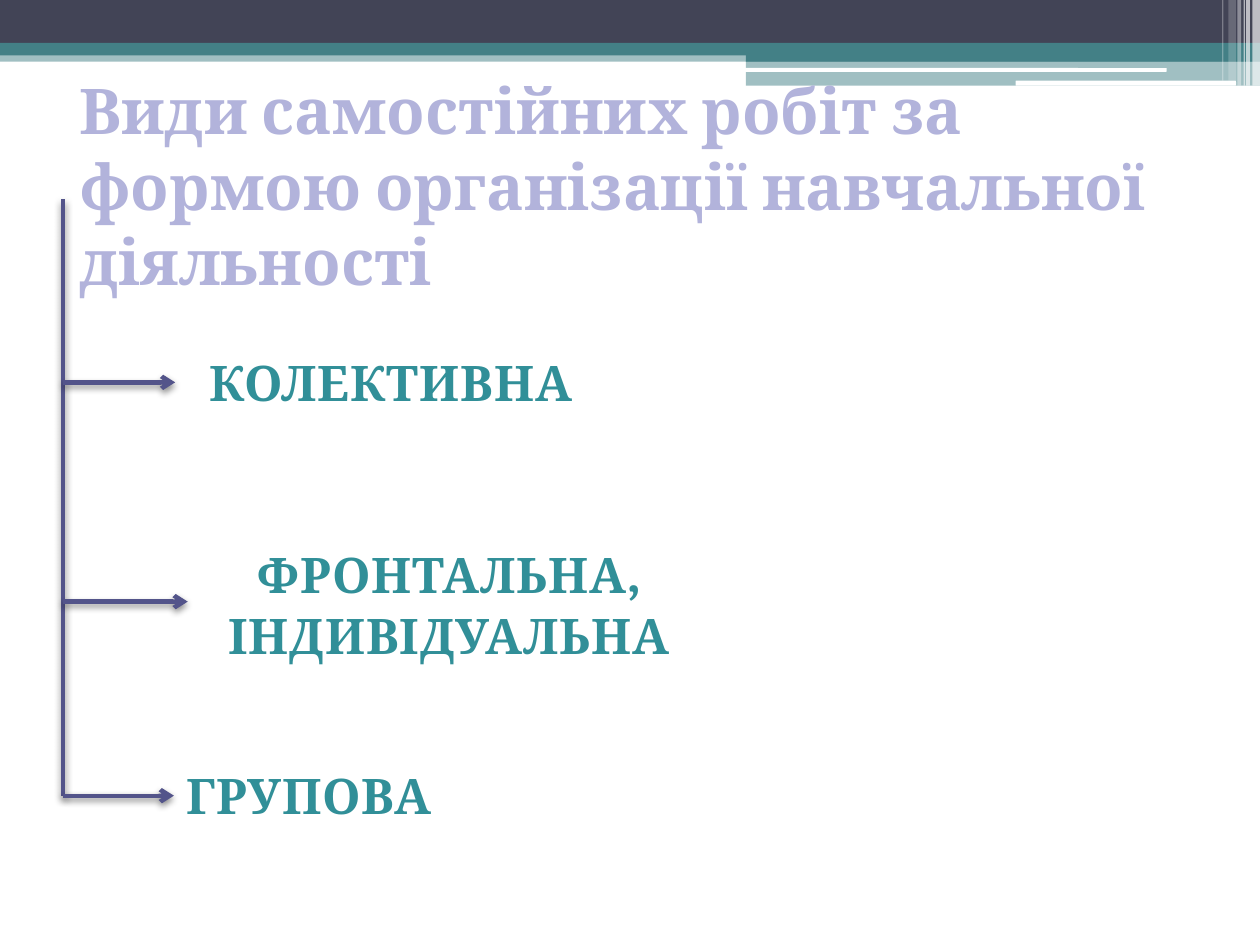
from lxml.etree import SubElement
from pptx import Presentation
from pptx.dml.color import RGBColor
from pptx.enum.shapes import MSO_CONNECTOR as CONNECTOR, MSO_SHAPE as SHAPE
from pptx.enum.text import MSO_AUTO_SIZE as AUTO_SIZE, PP_ALIGN as ALIGN
from pptx.oxml.ns import qn
from pptx.util import Inches, Pt

COLORS = {
    "navy": "424456",
    "teal": "438086",
    "white": "FFFFFF",
    "branch": "53548A",
    "title": "B2B3DB",
    "label": "318F98",
}
FONT = "Cambria"


def add_bar(slide, box, color, opacity=100, kind=SHAPE.RECTANGLE):
    bar = slide.shapes.add_shape(kind, *map(Inches, box))
    bar.shadow.inherit = False
    bar.fill.solid()
    bar.fill.fore_color.rgb = RGBColor.from_string(COLORS[color])
    bar.line.fill.background()
    if opacity < 100:
        fill_color = bar.fill._xPr.find(qn("a:solidFill"))[0]
        SubElement(fill_color, qn("a:alpha"), val=str(opacity * 1000))


def add_text(slide, box, lines, *, size, color, align=ALIGN.LEFT, spacing=0, wrap=False):
    """Each line is a list of (text, size) runs, or a string in the default size."""
    text_box = slide.shapes.add_textbox(*map(Inches, box))
    frame = text_box.text_frame
    frame.word_wrap = wrap
    frame.auto_size = AUTO_SIZE.SHAPE_TO_FIT_TEXT
    for index, line in enumerate(lines):
        paragraph = frame.paragraphs[0] if index == 0 else frame.add_paragraph()
        paragraph.alignment = align
        for text, run_size in [(line, size)] if isinstance(line, str) else line:
            run = paragraph.add_run()
            run.text = text
            run.font.name = FONT
            run.font.size = Pt(run_size)
            run.font.bold = True
            run.font.color.rgb = RGBColor.from_string(COLORS[color])
            if spacing:
                run.font._element.set("spc", str(int(spacing * 100)))
    return text_box


def add_branch(slide, start, end, label=None):
    """Draw a shadowed line; with a label, end it in an arrow at the label's left side."""
    branch = slide.shapes.add_connector(CONNECTOR.STRAIGHT, *map(Inches, start + end))
    branch.line.color.rgb = RGBColor.from_string(COLORS["branch"])
    branch.line.width = Pt(2.5)
    if label is not None:
        branch.end_connect(label, 1)
        SubElement(branch.line._get_or_add_ln(), qn("a:tailEnd"), type="arrow")
    effects = SubElement(branch._element.spPr, qn("a:effectLst"))
    shadow = SubElement(effects, qn("a:outerShdw"), blurRad=str(Pt(4)), dist=str(Pt(2)),
                        dir="5400000", algn="ctr", rotWithShape="0")
    shadow_color = SubElement(shadow, qn("a:srgbClr"), val="000000")
    SubElement(shadow_color, qn("a:alpha"), val="45000")


def add_header(slide, left, top, width):
    right = left + width
    step = left + 5.92
    step_width = right - step
    add_bar(slide, (left, top + 0.4, width, 0.09), "teal", 50)
    add_bar(slide, (left, top, width, 0.34), "navy")
    add_bar(slide, (left, top + 0.34, width, 0.1), "teal")
    add_bar(slide, (step, top + 0.39, step_width, 0.1), "teal")
    add_bar(slide, (step, top + 0.48, step_width, 0.2), "teal", 50)
    for x, y, length, height in [(5.91, 0.54, 3.35, 0.03), (8.06, 0.64, 1.75, 0.04)]:
        add_bar(slide, (left + x, top + y, length, height), "white",
                kind=SHAPE.ROUNDED_RECTANGLE)
    stripes = [  # distance from the right edge, width, height, opacity
        (0.06, 0.06, 0.68, 65),
        (0.11, 0.03, 0.68, 65),
        (0.13, 0.01, 0.68, 60),
        (0.18, 0.03, 0.68, 40),
        (0.25, 0.06, 0.64, 20),
        (0.3, 0.01, 0.64, 30),
    ]
    for offset, stripe_width, height, opacity in stripes:
        add_bar(slide, (right - offset, top, stripe_width, height), "white", opacity)


def add_forms_tree(slide, left, top, height):
    """Place a vertical trunk with an arrow to each form of work."""
    forms = [  # x, y, width, height from the trunk's top, alignment, lines
        (0.89, 1.17, 3.42, 0.57, ALIGN.CENTER, ["КОЛЕКТИВНА"]),
        (0.99, 2.64, 4.15, 1.11, ALIGN.CENTER,
         [[("ФРОНТАЛЬНА", 28), (",", 32)], "ІНДИВІДУАЛЬНА"]),
        (0.88, 4.45, 2.34, 0.57, ALIGN.LEFT, ["ГРУПОВА"]),
    ]
    add_branch(slide, (left, top), (left, top + height))
    for x, y, label_width, label_height, align, lines in forms:
        label = add_text(slide, (left + x, top + y, label_width, label_height), lines,
                         size=28, color="label", align=align, spacing=0.5)
        middle = top + y + label_height / 2
        add_branch(slide, (left, middle), (left + x, middle), label)


def main():
    deck = Presentation()
    deck.slide_width, deck.slide_height = Inches(10), Inches(7.5)
    slide = deck.slides.add_slide(deck.slide_layouts[6])
    add_header(slide, 0, 0, 10)
    add_forms_tree(slide, 0.5, 1.58, 4.74)
    add_text(slide, (0.53, 0.52, 9.48, 1.92),
             ["Види самостійних робіт за формою організації навчальної діяльності"],
             size=36, color="title", wrap=True)
    deck.save("out.pptx")


if __name__ == "__main__":
    main()
